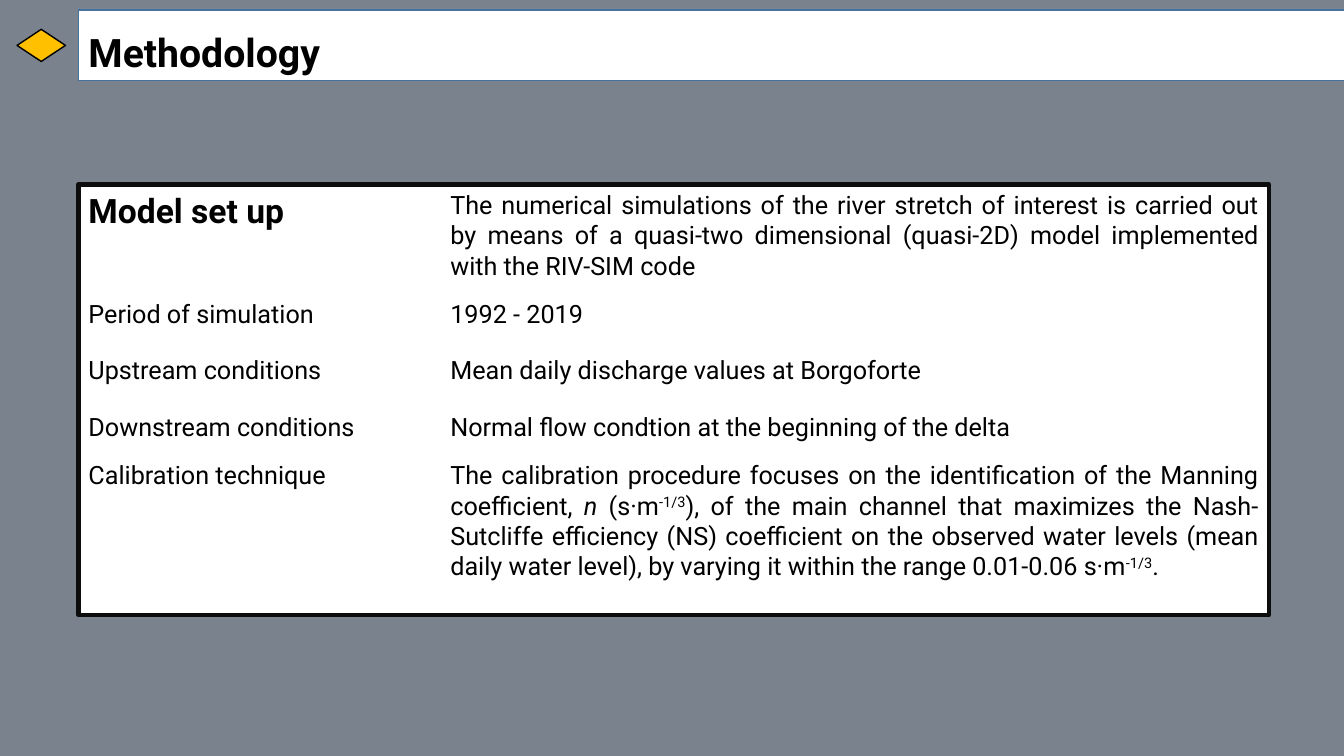
from dataclasses import dataclass

from pptx import Presentation
from pptx.dml.color import RGBColor
from pptx.enum.shapes import MSO_SHAPE
from pptx.enum.text import MSO_AUTO_SIZE, PP_ALIGN
from pptx.slide import Slide
from pptx.util import Cm, Pt

BLACK = RGBColor(0x00, 0x00, 0x00)
WHITE = RGBColor(0xFF, 0xFF, 0xFF)
SLATE = RGBColor(0x7A, 0x82, 0x8D)
FRAME = RGBColor(0x0D, 0x0D, 0x0D)
AMBER = RGBColor(0xFF, 0xC0, 0x00)
BLUE = RGBColor(0x43, 0x73, 0x9E)

LEFT = 1.98
VALUE_LEFT = 11.1
LABEL_WIDTH = 8.33
PANEL_TOP = 4.65
PERIOD_TOP = 7.39
ROW_PITCH = 1.42
LINE_HEIGHT = 1.02


@dataclass(frozen=True)
class Area:
    """Left, top, width and height in centimetres."""
    left: float
    top: float
    width: float
    height: float

    def lengths(self) -> tuple[Cm, Cm, Cm, Cm]:
        return Cm(self.left), Cm(self.top), Cm(self.width), Cm(self.height)


@dataclass(frozen=True)
class Panel:
    kind: MSO_SHAPE
    area: Area
    fill: RGBColor
    line: RGBColor
    line_width: float


@dataclass(frozen=True)
class Span:
    text: str
    italic: bool = False
    superscript: bool = False


@dataclass(frozen=True)
class Row:
    top: float
    label: str
    spans: tuple[Span, ...]
    value_width: float
    value_height: float = LINE_HEIGHT
    justified: bool = False
    heading: bool = False


PANELS = (
    Panel(MSO_SHAPE.RECTANGLE, Area(LEFT, PANEL_TOP, 30, 10.85), WHITE, FRAME, 3),
    Panel(MSO_SHAPE.FLOWCHART_DECISION, Area(0.43, 0.74, 1.22, 0.81), AMBER, BLACK, 1),
    Panel(MSO_SHAPE.RECTANGLE, Area(LEFT, 0.25, 32.66, 1.78), WHITE, BLUE, 1),
)

EXPONENT = Span("-1/3", superscript=True)
ROWS = (
    Row(PANEL_TOP, "Model set up",
        (Span("The numerical simulations of the river stretch of interest is carried out "
              "by means of a quasi-two dimensional (quasi-2D) model implemented "
              "with the RIV-SIM code"),),
        20.88, 2.57, justified=True, heading=True),
    Row(PERIOD_TOP, "Period of simulation", (Span("1992 - 2019"),), 6.55),
    Row(PERIOD_TOP + ROW_PITCH, "Upstream conditions",
        (Span("Mean daily discharge values at Borgoforte"),), 13.49),
    Row(PERIOD_TOP + 2 * ROW_PITCH, "Downstream conditions",
        (Span("Normal flow condtion at the beginning of the delta"),), 17.15),
    Row(11.46, "Calibration technique",
        (Span("The calibration procedure focuses on the identification of the Manning "
              "coefficient, "),
         Span("n ", italic=True),
         Span("(s·m"),
         EXPONENT,
         Span("), of the main channel that maximizes the Nash-Sutcliffe efficiency (NS) "
              "coefficient on the observed water levels (mean daily water level), "
              "by varying it within the range 0.01-0.06 s·m"),
         EXPONENT,
         Span(".")),
        20.88, 3.33, justified=True),
)


def add_panel(page: Slide, panel: Panel) -> None:
    shape = page.shapes.add_shape(panel.kind, *panel.area.lengths())
    shape.shadow.inherit = False
    shape.fill.solid()
    shape.fill.fore_color.rgb = panel.fill
    shape.line.color.rgb = panel.line
    shape.line.width = Pt(panel.line_width)


def add_text(page: Slide, area: Area, spans: tuple[Span, ...], size: float = 18,
             bold: bool = False, para_format: dict | None = None) -> None:
    frame = page.shapes.add_textbox(*area.lengths()).text_frame
    frame.word_wrap = True
    frame.auto_size = MSO_AUTO_SIZE.SHAPE_TO_FIT_TEXT
    para = frame.paragraphs[0]
    for name, value in (para_format or {}).items():
        setattr(para, name, value)
    for span in spans:
        run = para.add_run()
        run.text = span.text
        run.font.color.rgb = BLACK
        font_format = {"name": "Roboto", "size": Pt(size), "bold": bold,
                       "italic": span.italic}
        for name, value in font_format.items():
            setattr(run.font, name, value)
        if span.superscript:
            run._r.get_or_add_rPr().set("baseline", "30000")


def add_row(page: Slide, row: Row) -> None:
    label_height = 1.27 if row.heading else LINE_HEIGHT
    add_text(page, Area(LEFT, row.top, LABEL_WIDTH, label_height), (Span(row.label),),
             size=24 if row.heading else 18, bold=row.heading)
    alignment = PP_ALIGN.JUSTIFY if row.justified else PP_ALIGN.LEFT
    add_text(page, Area(VALUE_LEFT, row.top, row.value_width, row.value_height),
             row.spans, para_format={"alignment": alignment})


def main() -> None:
    deck = Presentation()
    deck.slide_width, deck.slide_height = Cm(33.87), Cm(19.05)
    page = deck.slides.add_slide(deck.slide_layouts[6])
    page.background.fill.solid()
    page.background.fill.fore_color.rgb = SLATE
    for panel in PANELS:
        add_panel(page, panel)
    add_text(page, Area(LEFT, 0, 18.54, 1.83), (Span("Methodology"),), size=28, bold=True,
             para_format={"line_spacing": 1.5, "space_after": Pt(6)})
    for row in ROWS:
        add_row(page, row)
    deck.save("out.pptx")


if __name__ == "__main__":
    main()
